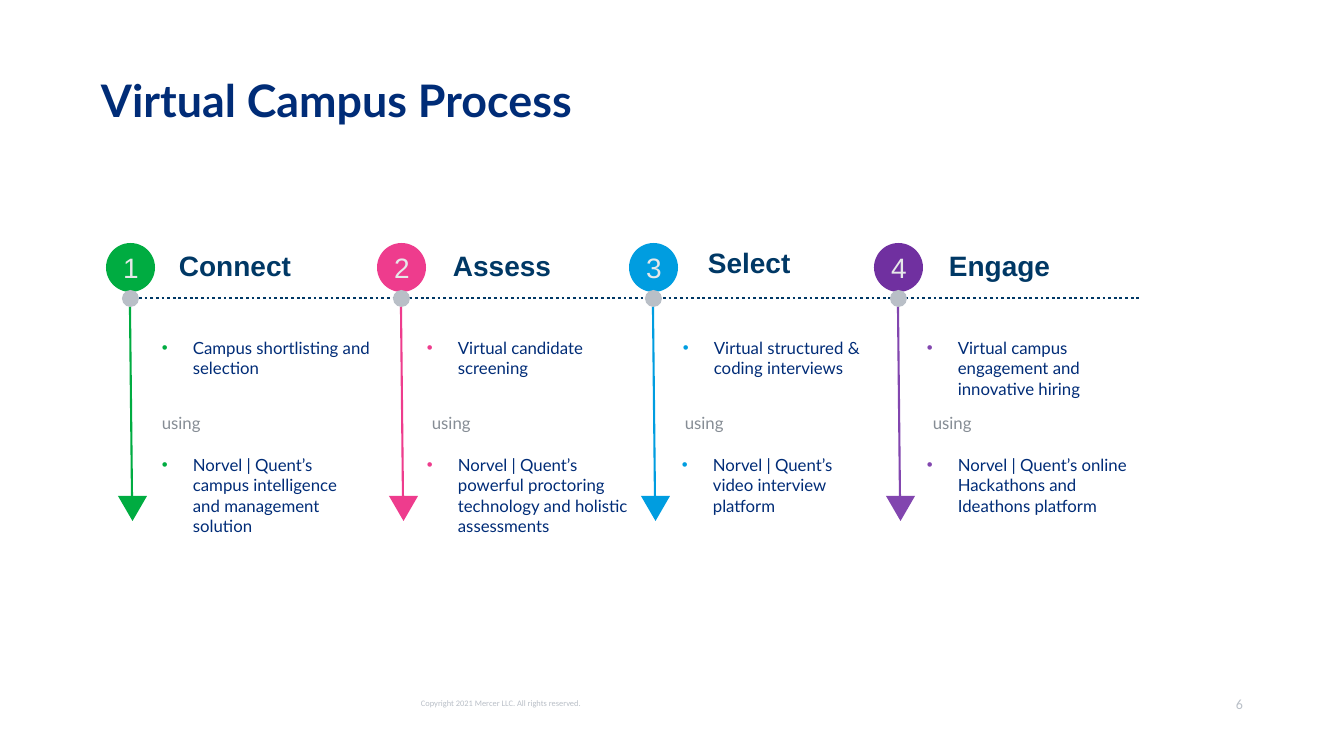
"""Builds the Virtual Campus Process slide: four numbered steps along a dotted line."""
from lxml import etree
from pptx import Presentation
from pptx import util as u
from pptx.dml.color import RGBColor
from pptx.enum import dml, shapes, text
from pptx.oxml.ns import qn

COLORS = {
    "green": "00AC41", "pink": "EE3C8D", "blue": "009DE0", "purple": "7030A0",
    "violet": "8246AF", "navy": "002C77", "heading": "003865", "number": "E6E8E9",
    "silver": "B9BFC7", "gray": "868D95",
}
TITLE = "Virtual Campus Process"
COPYRIGHT = "Copyright 2021 Mercer LLC. All rights reserved."
PAGE_NUMBER = "6"
LINK_WORD = "using"
STEPS = [
    {"name": "Connect", "ball": "green", "accent": "green", "left": 106,
     "name_box": (169, 244, 165, 44), "link_left": 152,
     "goal": ("Campus shortlisting and selection", (152, 333, 240, 50)),
     "tool": ("Norvel | Quent’s campus intelligence and management solution",
              (152, 450, 218, 92))},
    {"name": "Assess", "ball": "pink", "accent": "pink", "left": 377,
     "name_box": (443, 244, 272, 44), "link_left": 422,
     "goal": ("Virtual candidate screening", (417, 333, 207, 50)),
     "tool": ("Norvel | Quent’s powerful proctoring technology and holistic assessments",
              (417, 450, 223, 92))},
    {"name": "Select", "ball": "blue", "accent": "blue", "left": 629,
     "name_box": (698, 241, 187, 44), "link_left": 675,
     "goal": ("Virtual structured & coding interviews", (673, 333, 220, 50)),
     "tool": ("Norvel | Quent’s video interview platform", (672, 450, 190, 72))},
    {"name": "Engage", "ball": "purple", "accent": "violet", "left": 874,
     "name_box": (939, 244, 170, 44), "link_left": 923,
     "goal": ("Virtual campus engagement and innovative hiring", (917, 333, 240, 72)),
     "tool": ("Norvel | Quent’s online Hackathons and Ideathons platform",
              (917, 450, 240, 72))},
]
BALL_TOP, BALL_SIZE = 243, 49
DOT_TOP, DOT_SIZE = 290, 17
AXIS_LEFT, AXIS_RIGHT, AXIS_Y = 139, 1141, 298
ARROW_TOP, ARROW_BOTTOM = 307, 496
HEAD_WIDTH, HEAD_HEIGHT = 29, 25
LINK_TOP, LINK_WIDTH, LINK_HEIGHT = 408, 240, 30
INDENT = 31


def px(length):
    return u.Emu(round(length * 914400 / 100.8))


def rgb(name):
    return RGBColor.from_string(COLORS[name])


def add_span(para, words, size, font, color, bold=False):
    span = para.add_run()
    span.text = words
    span.font.size = u.Pt(size)
    span.font.name = font
    span.font.bold = bold
    span.font.color.rgb = rgb(color)


def add_text(page, place, words, size, font, color, bold=False, inset=True):
    box = page.shapes.add_textbox(*map(px, place))
    frame = box.text_frame
    frame.word_wrap = True
    if not inset:
        frame.margin_left = frame.margin_right = 0
        frame.margin_top = frame.margin_bottom = 0
    para = frame.paragraphs[0]
    add_span(para, words, size, font, color, bold)
    return para


def add_bullet(page, item, accent):
    words, place = item
    para = add_text(page, place, words, 12, "Lato", "navy")
    props = para._p.get_or_add_pPr()
    props.set("marL", str(px(INDENT)))
    props.set("indent", str(-px(INDENT)))
    tint = etree.SubElement(props, qn("a:buClr"))
    etree.SubElement(tint, qn("a:srgbClr"), val=COLORS[accent])
    etree.SubElement(props, qn("a:buFont"), typeface="Arial")
    etree.SubElement(props, qn("a:buChar"), char="•")


def add_solid(page, kind, place, color):
    shape = page.shapes.add_shape(kind, *map(px, place))
    shape.shadow.inherit = False
    shape.fill.solid()
    shape.fill.fore_color.rgb = rgb(color)
    shape.line.fill.background()
    return shape


def add_line(page, ends, color, width):
    line = page.shapes.add_connector(shapes.MSO_CONNECTOR.STRAIGHT, *map(px, ends))
    line.line.color.rgb = rgb(color)
    line.line.width = u.Pt(width)
    etree.SubElement(line._element.spPr, qn("a:effectLst"))
    return line


def add_step(page, number, step):
    left, accent = step["left"], step["accent"]
    oval = shapes.MSO_SHAPE.OVAL
    ball = add_solid(page, oval, (left, BALL_TOP, BALL_SIZE, BALL_SIZE), step["ball"])
    ball.text_frame.vertical_anchor = text.MSO_ANCHOR.MIDDLE
    para = ball.text_frame.paragraphs[0]
    para.alignment = text.PP_ALIGN.CENTER
    add_span(para, str(number), 20, "Arial", "number")
    dot_left = left + (BALL_SIZE - DOT_SIZE) // 2
    add_solid(page, oval, (dot_left, DOT_TOP, DOT_SIZE, DOT_SIZE), "silver")
    add_text(page, step["name_box"], step["name"], 20, "Arial", "heading", True)

    middle = left + BALL_SIZE // 2
    add_line(page, (middle, ARROW_TOP, middle + 2, ARROW_BOTTOM), accent, 1.5)
    head_left = middle + 2 - HEAD_WIDTH // 2
    head = add_solid(page, shapes.MSO_SHAPE.ISOSCELES_TRIANGLE,
                     (head_left, ARROW_BOTTOM, HEAD_WIDTH, HEAD_HEIGHT), accent)
    head.rotation = 180

    add_bullet(page, step["goal"], accent)
    add_text(page, (step["link_left"], LINK_TOP, LINK_WIDTH, LINK_HEIGHT),
             LINK_WORD, 12, "Lato", "gray")
    add_bullet(page, step["tool"], accent)


def main():
    deck = Presentation()
    deck.slide_width, deck.slide_height = px(1344), px(756)
    page = deck.slides.add_slide(deck.slide_layouts[6])

    title = add_text(page, (101, 76, 1177, 44), TITLE, 32, "Lato", "navy", True, False)
    title.line_spacing = u.Pt(36)
    axis = add_line(page, (AXIS_LEFT, AXIS_Y, AXIS_RIGHT, AXIS_Y), "heading", 2)
    axis.line.dash_style = dml.MSO_LINE.ROUND_DOT
    for number, step in enumerate(STEPS, 1):
        add_step(page, number, step)

    notice = add_text(page, (421, 699, 190, 14), COPYRIGHT, 6, "Calibri", "silver",
                      inset=False)
    notice.line_spacing = 0.9
    folio = add_text(page, (1207, 696, 36, 17), PAGE_NUMBER, 10, "Calibri", "silver",
                     inset=False)
    folio.alignment = text.PP_ALIGN.RIGHT
    deck.save("out.pptx")


if __name__ == "__main__":
    main()
